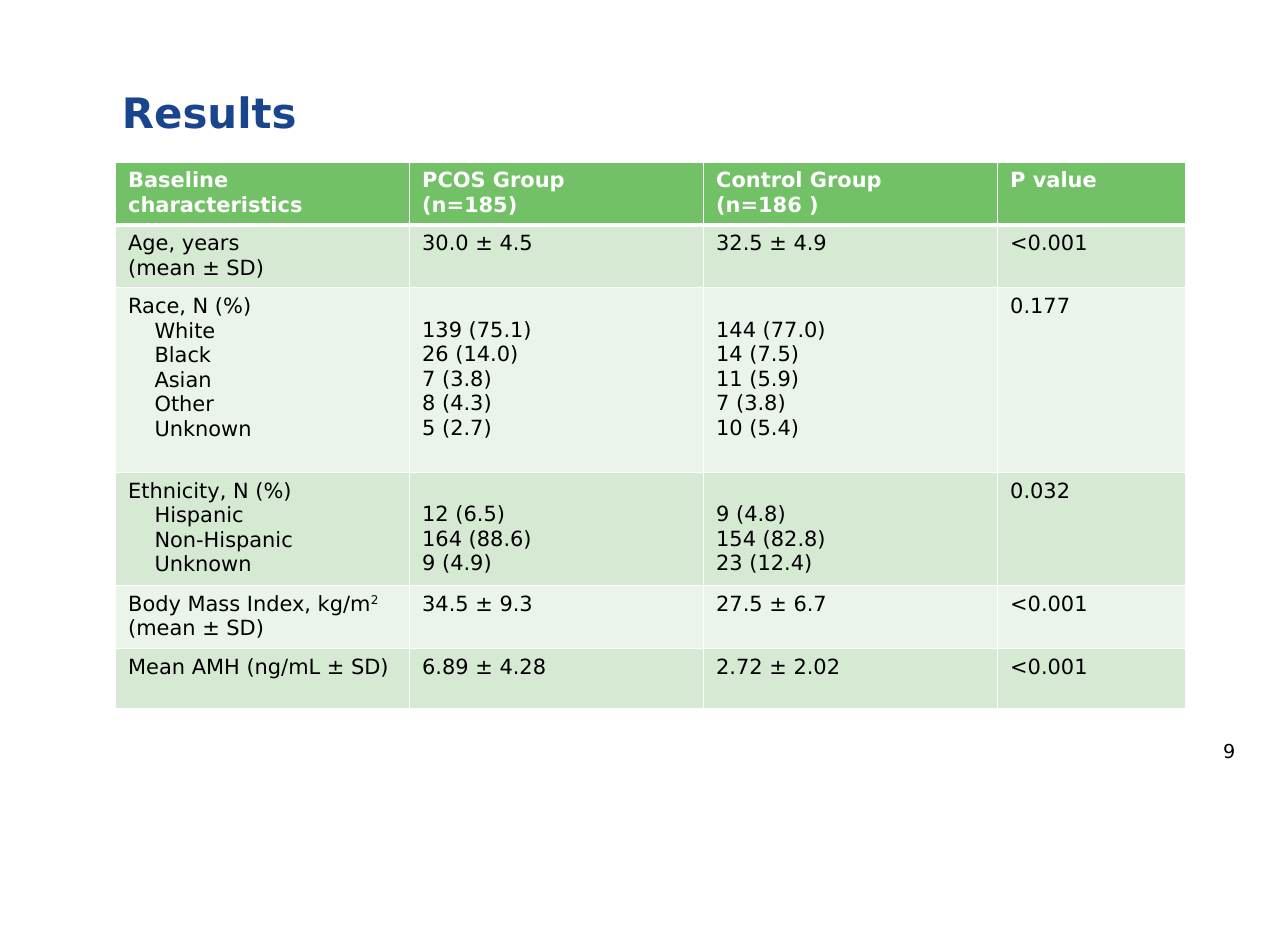
import pptx
import pptx.dml.color
import pptx.enum.text
import pptx.oxml
import pptx.oxml.ns
import pptx.util

EMU_PER_PX = 9144  # 100 px to the inch
ALIGN = pptx.enum.text.PP_ALIGN
BOTTOM = pptx.enum.text.MSO_ANCHOR.BOTTOM
WHITE, BLACK, NAVY, GREEN = "FFFFFF", "000000", "19458D", "73C167"
BANDS = ["D5E9D3", "EBF4EB"]
LINE = 19  # height of one line of table text

COLUMNS = [234, 234, 234, 150]
ROW_HEIGHTS = [48, 49, 147, 87, 49, 48]
HEADER = ["Baseline characteristics", "PCOS Group\n(n=185)", "Control Group\n(n=186 )", "P value"]
# A label with categories below it is followed by values that start one line lower.
ROWS = [
    ["Age, years\n(mean ± SD)", "30.0 ± 4.5", "32.5 ± 4.9", "<0.001"],
    ["Race, N (%)\n\tWhite\n\tBlack\n\tAsian\n\tOther\n\tUnknown",
     "139 (75.1)\n26 (14.0)\n7 (3.8)\n8 (4.3)\n5 (2.7)",
     "144 (77.0)\n14 (7.5)\n11 (5.9)\n7 (3.8)\n10 (5.4)", "0.177"],
    ["Ethnicity, N (%)\n\tHispanic\n\tNon-Hispanic\n\tUnknown",
     "12 (6.5)\n164 (88.6)\n9 (4.9)", "9 (4.8)\n154 (82.8)\n23 (12.4)", "0.032"],
    ["Body Mass Index, kg/m^2^ (mean ± SD)", "34.5 ± 9.3", "27.5 ± 6.7", "<0.001"],
    ["Mean AMH (ng/mL ± SD)", "6.89 ± 4.28", "2.72 ± 2.02", "<0.001"],
]


def px(length):
    return pptx.util.Emu(length * EMU_PER_PX)


def rgb(value):
    return pptx.dml.color.RGBColor.from_string(value)


def write(frame, text, size=12, color=BLACK, bold=False, align=ALIGN.LEFT, spacing=None):
    """Lines become paragraphs, a leading tab indents, and ^ encloses superscript."""
    for number, line in enumerate(text.split("\n")):
        para = frame.paragraphs[0] if number == 0 else frame.add_paragraph()
        para.alignment = align
        if spacing:
            para.line_spacing = spacing
        if line.startswith("\t"):
            para._p.get_or_add_pPr().set("marL", str(px(21)))
        for part, words in enumerate(line.strip("\t").split("^")):
            span = para.add_run()
            span.text = words
            span.font.name = Slide.font
            span.font.size = pptx.util.Pt(size)
            span.font.bold = bold
            span.font.color.rgb = rgb(color)
            if part % 2:
                span._r.get_or_add_rPr().set("baseline", "30000")


class Slide:
    font = "DejaVu Sans"

    def __init__(self, deck):
        self.page = deck.slides.add_slide(deck.slide_layouts[5])

    def place(self, box, left, top, width, height):
        box.left, box.top, box.width, box.height = map(px, (left, top, width, height))
        frame = box.text_frame
        frame.margin_left = frame.margin_top = frame.margin_right = frame.margin_bottom = 0
        frame.word_wrap = True
        frame.vertical_anchor = BOTTOM
        return frame

    def title(self, text, *area, **style):
        write(self.place(self.page.shapes.title, *area), text, **style)

    def text(self, text, *area, **style):
        box = self.page.shapes.add_textbox(0, 0, 0, 0)
        write(self.place(box, *area), text, **style)

    def cell(self, cell, text, fill, top_line=1, bottom_line=1, drop=0, **style):
        # Borders come before the fill in the cell properties
        properties = cell._tc.get_or_add_tcPr()
        for side, points in zip("LRTB", (1, 1, top_line, bottom_line)):
            properties.append(pptx.oxml.parse_xml(
                f'<a:ln{side} {pptx.oxml.ns.nsdecls("a")} w="{points * 12700}"><a:solidFill>'
                f'<a:srgbClr val="{WHITE}"/></a:solidFill></a:ln{side}>'))
        cell.fill.solid()
        cell.fill.fore_color.rgb = rgb(fill)
        cell.margin_left = cell.margin_right = px(10)
        cell.margin_top, cell.margin_bottom = px(5 + drop), px(5)
        write(cell.text_frame, text, **style)

    def table(self, left, top, header, rows):
        table = self.page.shapes.add_table(
            len(rows) + 1, len(header), px(left), px(top),
            px(sum(COLUMNS)), px(sum(ROW_HEIGHTS))).table
        table.horz_banding = False
        for column, width in zip(table.columns, COLUMNS):
            column.width = px(width)
        for row, height in zip(table.rows, ROW_HEIGHTS):
            row.height = px(height)
        for x, text in enumerate(header):
            self.cell(table.cell(0, x), text, GREEN, bottom_line=3, color=WHITE, bold=True)
        for y, row in enumerate(rows):
            grouped = "\t" in row[0]
            for x, text in enumerate(row):
                self.cell(table.cell(y + 1, x), text, BANDS[y % 2],
                          top_line=1 if y else 3,
                          drop=LINE if grouped and x in (1, 2) else 0)


def main():
    deck = pptx.Presentation()
    deck.slide_width, deck.slide_height = px(1025), px(750)
    slide = Slide(deck)
    # Page number
    slide.text("9", 744, 587, 239, 20, size=11, align=ALIGN.RIGHT, spacing=1.1)
    # Heading
    slide.title("Results", 97, 27, 884, 82, size=24, color=NAVY, bold=True, spacing=0.85)
    # Baseline characteristics of both groups
    slide.table(92, 129, HEADER, ROWS)
    deck.save("out.pptx")


if __name__ == "__main__":
    main()
